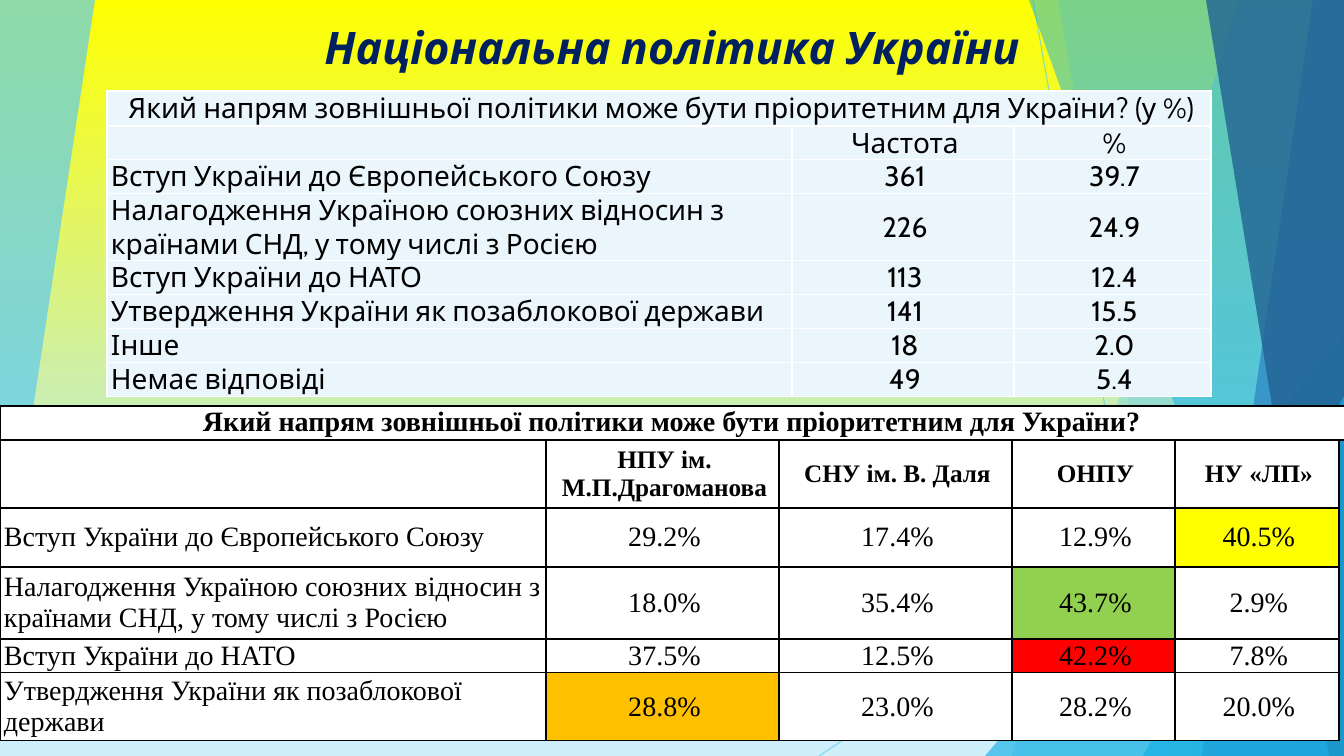
from lxml import etree
from pptx import Presentation
from pptx import util as u
from pptx.dml.color import RGBColor
from pptx.enum import shapes, text
from pptx.oxml import parse_xml
from pptx.oxml.ns import nsdecls, qn

PX = u.Inches(7.5) / 756
YELLOW = RGBColor(0xFF, 0xFF, 0x00)
PALE = RGBColor(0xB7, 0xE8, 0xF8)
PALEST = RGBColor(0xCF, 0xEF, 0xFA)
SKY = RGBColor(0x5F, 0xCB, 0xEF)
AZURE = RGBColor(0x17, 0xB0, 0xE4)
BLUE = RGBColor(0x2E, 0x83, 0xC3)
DEEP = RGBColor(0x22, 0x62, 0x92)
NAVY = RGBColor(0x00, 0x20, 0x60)
ICE = RGBColor(0xEA, 0xF6, 0xFC)
WHITE = RGBColor(0xFF, 0xFF, 0xFF)
BLACK = RGBColor(0x00, 0x00, 0x00)
GREEN = RGBColor(0x92, 0xD0, 0x50)
RED = RGBColor(0xFF, 0x00, 0x00)
ORANGE = RGBColor(0xFF, 0xC0, 0x00)

EU = "Вступ України до Європейського Союзу"
CIS = "Налагодження Україною союзних відносин з країнами СНД, у тому числі з Росією"
NATO = "Вступ України до НАТО"
NEUTRAL = "Утвердження України як позаблокової держави"

SURVEY = [
    ["Який напрям зовнішньої політики може бути пріоритетним для України? (у %)", "", ""],
    ["", "Частота", "%"],
    [EU, "361", "39.7"],
    [CIS, "226", "24.9"],
    [NATO, "113", "12.4"],
    [NEUTRAL, "141", "15.5"],
    ["Інше", "18", "2.0"],
    ["Немає відповіді", "49", "5.4"],
]
UNIVERSITIES = [
    ["Який напрям зовнішньої політики може бути пріоритетним для України? ", "", "", "", "", ""],
    ["", "НПУ ім. М.П.Драгоманова", "СНУ ім. В. Даля", "ОНПУ", "НУ «ЛП»", ""],
    [EU, "29.2%", "17.4%", "12.9%", "40.5%", ""],
    [CIS, "18.0%", "35.4%", "43.7%", "2.9%", ""],
    [NATO, "37.5%", "12.5%", "42.2%", "7.8%", ""],
    [NEUTRAL, "28.8%", "23.0%", "28.2%", "20.0%", ""],
]
LEADERS = {(2, 4): YELLOW, (3, 3): GREEN, (4, 3): RED, (5, 1): ORANGE}


def px(n):
    return u.Emu(round(n * PX))


def set_alpha(sp, percent):
    clr = sp._element.spPr.find(".//" + qn("a:srgbClr"))
    etree.SubElement(clr, qn("a:alpha")).set("val", str(percent * 1000))


def set_background(s, stops):
    gs = "".join(f'<a:gs pos="{pos * 1000}"><a:srgbClr val="{color}"/></a:gs>' for pos, color in stops)
    s._element.cSld.insert(0, parse_xml(
        f'<p:bg {nsdecls("p", "a")}><p:bgPr><a:gradFill rotWithShape="1"><a:gsLst>{gs}</a:gsLst>'
        '<a:lin ang="5400000" scaled="0"/></a:gradFill><a:effectLst/></p:bgPr></p:bg>'))


def style_facet(sp, color, percent):
    sp.shadow.inherit = False
    sp.fill.solid()
    sp.fill.fore_color.rgb = color
    sp.line.fill.background()
    set_alpha(sp, percent)


def add_facet(s, points, color, percent):
    fb = s.shapes.build_freeform(*points[0], scale=PX)
    fb.add_line_segments(points[1:], close=True)
    style_facet(fb.convert_to_shape(), color, percent)


def add_corner(s, x, y):
    sp = s.shapes.add_shape(shapes.MSO_SHAPE.ISOSCELES_TRIANGLE,
                            px(x), px(y), px(1344 - x), px(756 - y))
    sp.adjustments[0] = 1
    style_facet(sp, AZURE, 66)


def add_ray(s, x1, y1, x2, y2):
    ray = s.shapes.add_connector(shapes.MSO_CONNECTOR.STRAIGHT, px(x1), px(y1), px(x2), px(y2))
    ray.line.color.rgb = SKY
    ray.line.width = u.Pt(0.75)
    set_alpha(ray, 70)
    etree.SubElement(ray._element.spPr, qn("a:effectLst"))


def add_title(s, title):
    tf = s.shapes.add_textbox(0, px(15), px(1344), px(64)).text_frame
    tf.word_wrap = True
    tf.auto_size = text.MSO_AUTO_SIZE.SHAPE_TO_FIT_TEXT
    p = tf.paragraphs[0]
    p.text = title
    p.alignment = text.PP_ALIGN.CENTER
    set_font(p, "Cabin", 32, True, NAVY)
    p.font.italic = True


def set_font(p, name, size, bold, color):
    p.font.name = name
    p.font.size = u.Pt(size)
    p.font.bold = bold
    p.font.color.rgb = color


def set_borders(cell, color, sides):
    tcPr = cell._tc.get_or_add_tcPr()
    for i, side in enumerate("LRTB"):
        paint = f'<a:solidFill><a:srgbClr val="{color}"/></a:solidFill>' if side in sides else "<a:noFill/>"
        tcPr.insert(i, parse_xml(f'<a:ln{side} {nsdecls("a")} w="12700">{paint}</a:ln{side}>'))


def add_grid(s, x, y, cols, rows, cells, font, fill, border, bold_rows=0, heading_size=20,
             highlights=None, bare_col=None):
    highlights = highlights or {}
    tbl = s.shapes.add_table(len(rows), len(cols), px(x), px(y), px(sum(cols)), px(sum(rows))).table
    tbl.first_row = tbl.horz_banding = False
    for col, width in zip(tbl.columns, cols):
        col.width = px(width)
    for row, height in zip(tbl.rows, rows):
        row.height = px(height)
    tbl.cell(0, 0).merge(tbl.cell(0, len(cols) - 1))
    for r, values in enumerate(cells):
        for c, value in enumerate(values):
            cell = tbl.cell(r, c)
            bare = c == bare_col and r > 0
            cell.margin_left = px(0 if c == bare_col else 4)
            cell.margin_right = cell.margin_top = cell.margin_bottom = 0
            cell.vertical_anchor = text.MSO_ANCHOR.MIDDLE if r else text.MSO_ANCHOR.TOP
            p = cell.text_frame.paragraphs[0]
            p.text = value
            p.alignment = text.PP_ALIGN.LEFT if c == 0 and r > 0 else text.PP_ALIGN.CENTER
            set_font(p, font, heading_size if r == 1 else 20, r < bold_rows, BLACK)
            if bare:
                cell.fill.background()
            else:
                cell.fill.solid()
                cell.fill.fore_color.rgb = highlights.get((r, c), fill)
            set_borders(cell, border, ("LT" if r == 1 else "L") if bare else "LRTB")


def main():
    prs = Presentation()
    prs.slide_width, prs.slide_height = px(1344), px(756)
    s = prs.slides.add_slide(prs.slide_layouts[6])
    set_background(s, [(0, YELLOW), (74, PALE), (83, PALE), (100, PALEST)])

    add_facet(s, [(0, 0), (95, 0), (0, 627)], SKY, 70)
    add_ray(s, 1033, 0, 1167, 756)
    add_ray(s, 1344, 406, 819, 756)
    right = [(1344, 0), (1344, 756)]
    add_facet(s, [(1238, 0), *right, (1012, 756)], SKY, 36)
    add_facet(s, [(1058, 0), *right, (1191, 756)], SKY, 20)
    add_corner(s, 985, 336)
    add_facet(s, [(1029, 0), *right, (1301, 756)], AZURE, 50)
    add_facet(s, [(1313, 0), *right, (1202, 756)], BLUE, 70)
    add_facet(s, [(1206, 0), *right, (1329, 756)], DEEP, 80)
    add_corner(s, 1143, 396)

    add_title(s, "Національна політика України")
    add_grid(s, 107, 91, [685, 222, 197], [35, 33, 34, 67, 34, 34, 33, 34],
             SURVEY, "Cabin", ICE, WHITE)
    add_grid(s, 0, 406, [546, 233, 233, 163, 164, 5], [34, 68, 59, 72, 33, 68],
             UNIVERSITIES, "Times New Roman", WHITE, BLACK, bold_rows=2, heading_size=18,
             highlights=LEADERS, bare_col=5)
    prs.save("out.pptx")


if __name__ == "__main__":
    main()
